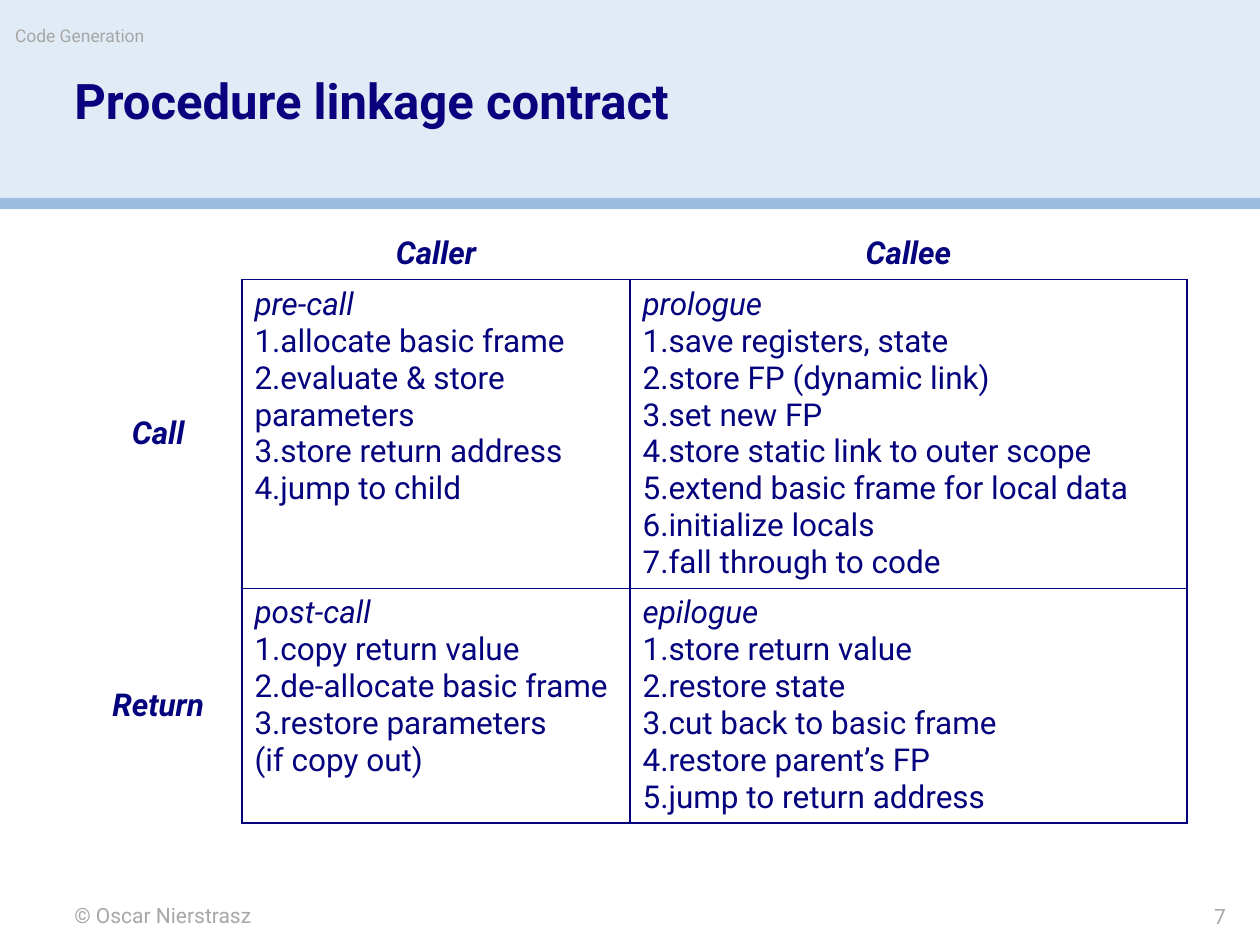
from pptx import Presentation
from pptx.dml.color import RGBColor
from pptx.enum.shapes import MSO_SHAPE
from pptx.enum.text import MSO_ANCHOR, PP_ALIGN
from pptx.oxml.ns import qn
from pptx.util import Inches, Pt
from lxml.etree import SubElement

INK, TITLE, GREY = "05027D", "0A017F", "A7A7A7"
HEADER, RULE = "E1EBF5", "9CBDDE"

COLUMNS = ["Caller", "Callee"]
ROWS = [
    ("Call", [
        ("pre-call", ["allocate basic frame", "evaluate & store parameters",
                      "store return address", "jump to child"]),
        ("prologue", ["save registers, state", "store FP (dynamic link)",
                      "set new FP", "store static link to outer scope",
                      "extend basic frame for local data",
                      "initialize locals", "fall through to code"]),
    ]),
    ("Return", [
        ("post-call", ["copy return value", "de-allocate basic frame",
                       "restore parameters \n(if copy out)"]),
        ("epilogue", ["store return value", "restore state",
                      "cut back to basic frame", "restore parent’s FP",
                      "jump to return address"]),
    ]),
]


def rgb(value):
    return RGBColor.from_string(value)


class Deck:
    """Holds the style and the current slide."""

    font = "Roboto"

    def __init__(self, prs):
        self.s = prs.slides.add_slide(prs.slide_layouts[5])

    def place(self, sp, x, y, w, h):
        sp.left, sp.top, sp.width, sp.height = map(Inches, (x, y, w, h))

    def style(self, p, size, color, bold=False, italic=False, align=PP_ALIGN.LEFT):
        f = p.font
        f.name, f.size, f.bold, f.italic = self.font, Pt(size), bold, italic
        f.color.rgb = rgb(color)
        p.alignment = align

    def frame(self, sp, text, size, color, **look):
        tf = sp.text_frame
        tf.margin_left = tf.margin_right = tf.margin_top = tf.margin_bottom = 0
        tf.word_wrap = True
        tf.vertical_anchor = MSO_ANCHOR.TOP
        p = tf.paragraphs[0]
        p.text = text
        self.style(p, size, color, **look)
        return p

    def bar(self, x, y, w, h, color):
        sp = self.s.shapes.add_shape(MSO_SHAPE.RECTANGLE, *map(Inches, (x, y, w, h)))
        sp.shadow.inherit = False
        sp.fill.solid()
        sp.fill.fore_color.rgb = rgb(color)
        sp.line.fill.background()

    def title(self, text, x, y, w, h):
        sp = self.s.shapes.title
        self.s.shapes._spTree.append(sp._element)
        self.place(sp, x, y, w, h)
        self.frame(sp, text, 28, TITLE, bold=True).line_spacing = 0.9

    def text(self, text, x, y, w, h, size, **look):
        sp = self.s.shapes.add_textbox(*map(Inches, (x, y, w, h)))
        self.frame(sp, text, size, GREY, **look)

    def borders(self, cell, **edges):
        tc_pr = cell._tc.get_or_add_tcPr()
        for edge, shown in edges.items():
            ln = SubElement(tc_pr, qn(f"a:ln{edge}"), w=str(Pt(1)))
            if shown:
                fill = SubElement(ln, qn("a:solidFill"))
                SubElement(fill, qn("a:srgbClr"), val=INK)
            else:
                SubElement(ln, qn("a:noFill"))

    def heading(self, cell, text):
        cell.vertical_anchor = MSO_ANCHOR.MIDDLE
        p = cell.text_frame.paragraphs[0]
        p.text = text
        self.style(p, 18, INK, bold=True, italic=True, align=PP_ALIGN.CENTER)

    def steps(self, cell, name, items):
        tf = cell.text_frame
        p = tf.paragraphs[0]
        p.text = name
        self.style(p, 18, INK, italic=True)
        for item in items:
            p = tf.add_paragraph()
            p.text = item
            self.style(p, 18, INK)
            p_pr = p._p.get_or_add_pPr()
            p_pr.set("marL", "0")
            p_pr.set("indent", "0")
            number = p_pr.makeelement(qn("a:buAutoNum"), {"type": "arabicPeriod"})
            p_pr.insert_element_before(number, "a:tabLst", "a:defRPr", "a:extLst")

    def table(self, x, y, widths, heights):
        size = map(Inches, (x, y, sum(widths), sum(heights)))
        tbl = self.s.shapes.add_table(len(heights), len(widths), *size).table
        tbl.first_row = tbl.horz_banding = False
        for col, w in zip(tbl.columns, widths):
            col.width = Inches(w)
        for row, h in zip(tbl.rows, heights):
            row.height = Inches(h)
        for r in range(len(heights)):
            for c in range(len(widths)):
                cell = tbl.cell(r, c)
                body = r > 0 and c > 0
                self.borders(cell, L=body, R=r > 0, T=body, B=c > 0)
                cell.fill.background()
        return tbl


def main():
    prs = Presentation()
    prs.slide_width, prs.slide_height = Inches(10), Inches(7.5)
    deck = Deck(prs)
    deck.bar(0, 0, 10, 1.58, HEADER)
    deck.bar(0, 1.57, 10, 0.09, RULE)
    deck.title("Procedure linkage contract", 0.59, 0.61, 8.83, 0.89)

    tbl = deck.table(0.59, 1.81, [1.33, 3.08, 4.42], [0.41, 2.45, 1.86])
    for c, name in enumerate(COLUMNS, 1):
        deck.heading(tbl.cell(0, c), name)
    for r, (name, cells) in enumerate(ROWS, 1):
        deck.heading(tbl.cell(r, 0), name)
        for c, (phase, items) in enumerate(cells, 1):
            deck.steps(tbl.cell(r, c), phase, items)

    deck.text("© Oscar Nierstrasz", 0.59, 7.16, 4.17, 0.2, 12)
    deck.text("Code Generation", 0.12, 0.2, 5.9, 0.28, 10)
    deck.text("7", 8.25, 7.17, 1.48, 0.2, 12, align=PP_ALIGN.RIGHT)
    prs.save("out.pptx")


if __name__ == "__main__":
    main()
